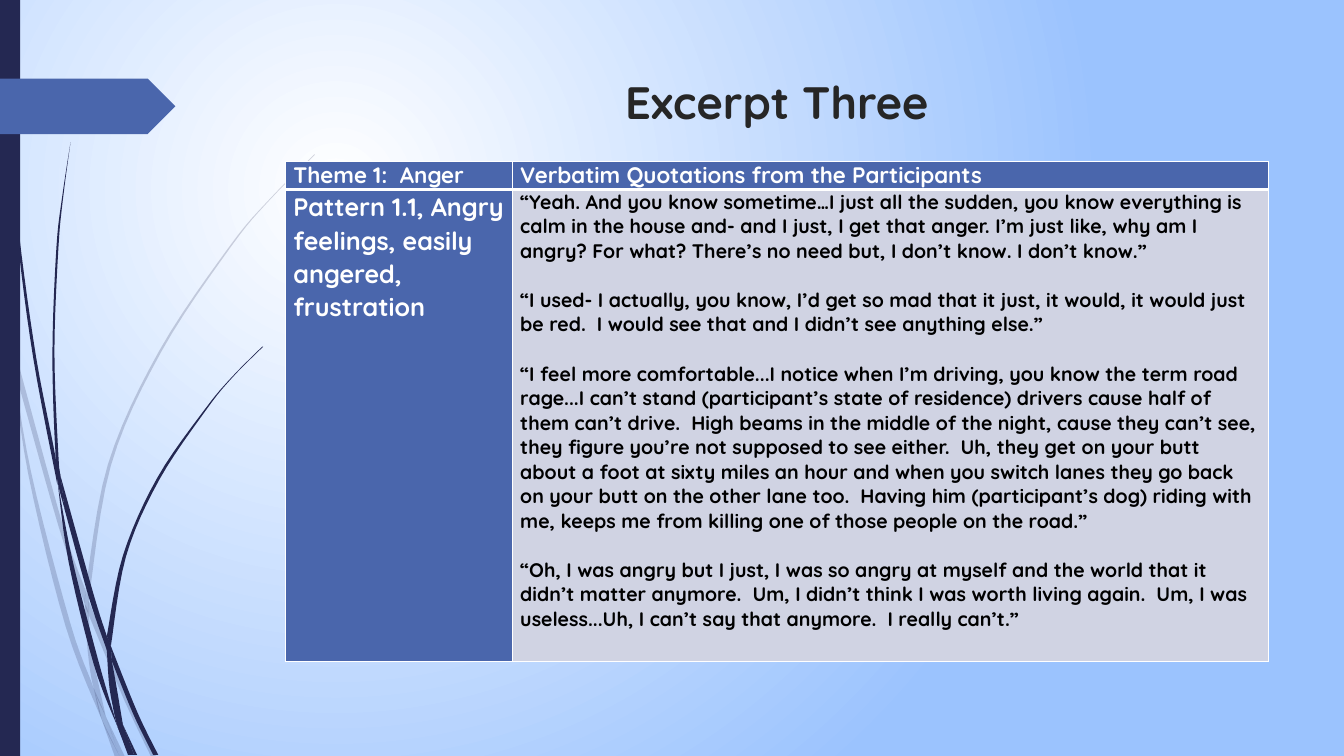
"""Build the Excerpt Three slide: wisp decoration, title and quotation table."""
from dataclasses import dataclass

import pptx
import pptx.dml.color
import pptx.enum.shapes
import pptx.enum.text
import pptx.oxml
import pptx.oxml.ns
import pptx.util
from pptx.util import Inches

RGBColor = pptx.dml.color.RGBColor
NAVY = RGBColor(0x24, 0x28, 0x52)
BLUE = RGBColor(0x4A, 0x66, 0xAC)
SKY = RGBColor(0x9B, 0xC3, 0xFE)
PALE = RGBColor(0xD0, 0xD3, 0xE3)
WHITE = RGBColor(0xFF, 0xFF, 0xFF)
BLACK = RGBColor(0, 0, 0)
CHARCOAL = RGBColor(0x26, 0x26, 0x26)
FONT = "Quicksand"
NS = pptx.oxml.ns.nsdecls("a")
STEPS = 6
Point = tuple[float, float]


@dataclass
class Blade:
    left: list[Point]
    right: list[Point]


@dataclass
class TableCell:
    row: int
    col: int
    paragraphs: list[str]
    size: int
    color: RGBColor
    fill: RGBColor
    before: float = 0
    after: float = 0
    spacing: float = 1.0


FAINT_BLADES = [
    Blade([(0, 2.99), (0.1, 3.44), (0.11, 3.5)], [(0, 2.82), (0.09, 3.22), (0.11, 3.5)]),
    Blade([(0.17, 3.76), (0.58, 5.22), (0.84, 5.99)],
          [(0.14, 3.45), (0.62, 5.2), (0.85, 5.86)]),
    Blade([(0.88, 6.1), (1.23, 6.94), (1.5, 7.51)], [(0.88, 5.96), (1.27, 6.92), (1.55, 7.51)]),
    Blade([(1.05, 7.11), (1.19, 7.51)], [(1.05, 7.11), (1.24, 7.51)]),
    Blade([(0.11, 3.5), (0.28, 4.7), (0.65, 6.21), (1.01, 7.14)],
          [(0.11, 3.5), (0.31, 4.69), (0.7, 6.19), (0.93, 6.83), (1.01, 7.14)]),
    Blade([(0.84, 5.99), (0.87, 6.46), (0.93, 6.83), (1.05, 7.11)],
          [(0.84, 5.99), (0.88, 6.1), (0.91, 6.46), (1.05, 7.11)]),
    Blade([(3.12, 1.53), (2.68, 1.97), (2.28, 2.44), (1.58, 3.48), (1.07, 4.61), (0.85, 5.84)],
          [(3.12, 1.54), (2.68, 1.98), (2.29, 2.45), (1.6, 3.49), (1.1, 4.62), (0.88, 5.96)]),
    Blade([(1.01, 7.14), (1.14, 7.51)], [(1.01, 7.14), (1.19, 7.51)]),
    Blade([(0.85, 5.86), (0.84, 5.99), (0.88, 6.1)], [(0.85, 5.86), (0.88, 5.96), (0.88, 6.1)]),
    Blade([(0.93, 6.83), (1.01, 7.14), (1.19, 7.51)], [(0.93, 6.83), (1.05, 7.11), (1.19, 7.51)]),
]
DARK_BLADES = [
    Blade([(0.03, 0), (0.07, 1.1), (0.17, 2.33), (0.33, 3.55), (0.57, 4.81)],
          [(0.04, 0), (0.08, 1.09), (0.19, 2.32), (0.36, 3.55), (0.55, 4.53), (0.57, 4.81)]),
    Blade([(0.64, 5.05), (0.88, 5.92), (1.06, 6.45)], [(0.6, 4.72), (0.93, 5.9), (1.06, 6.31)]),
    Blade([(1.11, 6.56), (1.32, 7.08), (1.52, 7.49)], [(1.1, 6.41), (1.36, 7.06), (1.57, 7.49)]),
    Blade([(0.57, 4.77), (0.68, 5.57), (0.93, 6.59), (1.17, 7.22)],
          [(0.57, 4.77), (0.72, 5.56), (0.98, 6.57), (1.17, 7.22)]),
    Blade([(0.7, 1.41), (0.62, 1.93), (0.56, 2.45), (0.52, 3.49), (0.55, 4.49), (0.6, 4.72)],
          [(0.7, 1.41), (0.63, 1.93), (0.58, 2.45), (0.54, 3.49), (0.58, 4.53), (0.6, 4.72)]),
    Blade([(1.22, 7.19), (1.33, 7.49)], [(1.22, 7.19), (1.36, 7.49)]),
    Blade([(0.55, 4.49), (0.57, 4.77), (0.64, 5.05)], [(0.55, 4.49), (0.6, 4.72), (0.64, 5.05)]),
    Blade([(2.6, 3.44), (2.31, 3.73), (2.04, 4.05), (1.56, 4.74), (1.22, 5.51), (1.06, 6.31)],
          [(2.61, 3.44), (2.31, 3.74), (2.05, 4.06), (1.58, 4.76), (1.25, 5.52), (1.1, 6.41)]),
    Blade([(1.17, 7.22), (1.27, 7.49)], [(1.17, 7.22), (1.31, 7.49)]),
    Blade([(1.06, 6.45), (1.1, 6.91), (1.22, 7.19)], [(1.06, 6.45), (1.11, 6.56), (1.22, 7.19)]),
    Blade([(1.06, 6.31), (1.06, 6.45), (1.11, 6.56)], [(1.06, 6.31), (1.1, 6.41), (1.11, 6.56)]),
    Blade([(1.1, 6.91), (1.17, 7.22), (1.3, 7.49)], [(1.1, 6.91), (1.22, 7.19), (1.33, 7.49)]),
]
QUOTES = [
    "“Yeah. And you know sometime…I just all the sudden, you know everything is calm in the house and- and "
    "I just, I get that anger. I’m just like, why am I angry? For what? There’s no need but, I don’t know. "
    "I don’t know.”",
    "“I used- I actually, you know, I’d get so mad that it just, it would, it would just be red.  I would "
    "see that and I didn’t see anything else.”",
    "“I feel more comfortable...I notice when I’m driving, you know the term road rage...I can’t stand "
    "(participant’s state of residence) drivers cause half of them can’t drive.  High beams in the middle "
    "of the night, cause they can’t see, they figure you’re not supposed to see either.  Uh, they get on "
    "your butt about a foot at sixty miles an hour and when you switch lanes they go back on your butt on "
    "the other lane too.  Having him (participant’s dog) riding with me, keeps me from killing one of "
    "those people on the road.”",
    "“Oh, I was angry but I just, I was so angry at myself and the world that it didn’t matter anymore.  "
    "Um, I didn’t think I was worth living again.  Um, I was useless...Uh, I can’t say that anymore.  "
    "I really can’t.”",
]
CELLS = [
    TableCell(0, 0, ["Theme 1:  Anger"], 16, WHITE, BLUE),
    TableCell(0, 1, ["Verbatim Quotations from the Participants"], 16, WHITE, BLUE),
    TableCell(1, 0, ["Pattern 1.1, Angry feelings, easily angered, frustration"],
              18, WHITE, BLUE, before=6, after=6, spacing=1.06),
    TableCell(1, 1, QUOTES, 14, BLACK, PALE, after=17.6),
]


def set_background(s) -> None:
    fill = s.background.fill
    fill.gradient()
    for stop, color, position in zip(fill.gradient_stops, (WHITE, SKY), (0, 1)):
        stop.color.rgb, stop.position = color, position
    grad = s.element.find(".//" + pptx.oxml.ns.qn("a:gradFill"))
    grad.remove(grad.find(pptx.oxml.ns.qn("a:lin")))
    grad.append(pptx.oxml.parse_xml(
        f'<a:path {NS} path="circle"><a:fillToRect l="50000" t="50000" r="100000" b="100000"/></a:path>'))


def smooth(points: list[Point]) -> list[Point]:
    padded = [points[0], *points, points[-1]]
    curve = []
    for a, b, c, d in zip(padded, padded[1:], padded[2:], padded[3:]):
        for t in (i / STEPS for i in range(STEPS)):
            curve.append(tuple(
                0.5 * (2 * q + (r - p) * t + (2 * p - 5 * q + 4 * r - u) * t ** 2
                       + (3 * q - p - 3 * r + u) * t ** 3)
                for p, q, r, u in zip(a, b, c, d)))
    return curve + [points[-1]]


def paint(sp, color: RGBColor) -> None:
    sp.fill.solid()
    sp.fill.fore_color.rgb = color
    sp.line.fill.background()
    sp.shadow.inherit = False


def add_blade(s, blade: Blade, alpha: int) -> None:
    outline = smooth(blade.left) + smooth(blade.right)[::-1]
    points = [(Inches(x), Inches(y)) for x, y in outline]
    builder = s.shapes.build_freeform(*points[0])
    builder.add_line_segments(points[1:], close=True)
    sp = builder.convert_to_shape()
    paint(sp, NAVY)
    if alpha < 100:
        color = sp.element.spPr.find(".//" + pptx.oxml.ns.qn("a:srgbClr"))
        color.append(pptx.oxml.parse_xml(f'<a:alpha {NS} val="{alpha * 1000}"/>'))


def add_band(s, kind, top: float, width: float, height: float, color: RGBColor) -> None:
    paint(s.shapes.add_shape(kind, 0, Inches(top), Inches(width), Inches(height)), color)


def set_font(p, size: float, color: RGBColor) -> None:
    p.font.name, p.font.size, p.font.bold = FONT, pptx.util.Pt(size), True
    p.font.color.rgb = color


def add_title(s) -> None:
    tf = s.shapes.add_textbox(Inches(2.83), Inches(0.69), Inches(9.75), Inches(0.63)).text_frame
    tf.word_wrap = True
    tf.vertical_anchor = pptx.enum.text.MSO_ANCHOR.MIDDLE
    p = tf.paragraphs[0]
    p.text = "Excerpt Three"
    p.alignment = pptx.enum.text.PP_ALIGN.CENTER
    set_font(p, 32.4, CHARCOAL)


def set_borders(cell, row: int) -> None:
    widths = {"L": 1, "R": 1, "T": 3 if row == 1 else 1, "B": 3 if row == 0 else 1}
    tc_pr = cell._tc.get_or_add_tcPr()
    for i, (side, width) in enumerate(widths.items()):
        tc_pr.insert(i, pptx.oxml.parse_xml(
            f'<a:ln{side} {NS} w="{pptx.util.Pt(width)}"><a:solidFill>'
            f'<a:srgbClr val="{WHITE}"/></a:solidFill></a:ln{side}>'))


def fill_cell(cell, data: TableCell) -> None:
    cell.margin_left = cell.margin_right = Inches(0.08)
    cell.margin_top = cell.margin_bottom = 0
    cell.fill.solid()
    cell.fill.fore_color.rgb = data.fill
    set_borders(cell, data.row)
    cell.text_frame.text = "\n".join(data.paragraphs)
    for p in cell.text_frame.paragraphs:
        set_font(p, data.size, data.color)
        p.line_spacing = data.spacing
        p.space_before, p.space_after = pptx.util.Pt(data.before), pptx.util.Pt(data.after)


def add_quotations(s) -> None:
    table = s.shapes.add_table(2, 2, Inches(2.83), Inches(1.6), Inches(9.75), Inches(4.96)).table
    table.horz_banding = False
    for col, width in zip(table.columns, (2.25, 7.5)):
        col.width = Inches(width)
    for row, height in zip(table.rows, (0.28, 4.68)):
        row.height = Inches(height)
    for data in CELLS:
        fill_cell(table.cell(data.row, data.col), data)


prs = pptx.Presentation()
prs.slide_width, prs.slide_height = Inches(13.33), Inches(7.5)
s = prs.slides.add_slide(prs.slide_layouts[6])
set_background(s)
for blades, alpha in ((FAINT_BLADES, 20), (DARK_BLADES, 100)):
    for blade in blades:
        add_blade(s, blade, alpha)
add_band(s, pptx.enum.shapes.MSO_SHAPE.RECTANGLE, 0, 0.2, 7.5, NAVY)
add_band(s, pptx.enum.shapes.MSO_SHAPE.PENTAGON, 0.78, 1.74, 0.55, BLUE)
add_title(s)
add_quotations(s)
prs.save("out.pptx")
